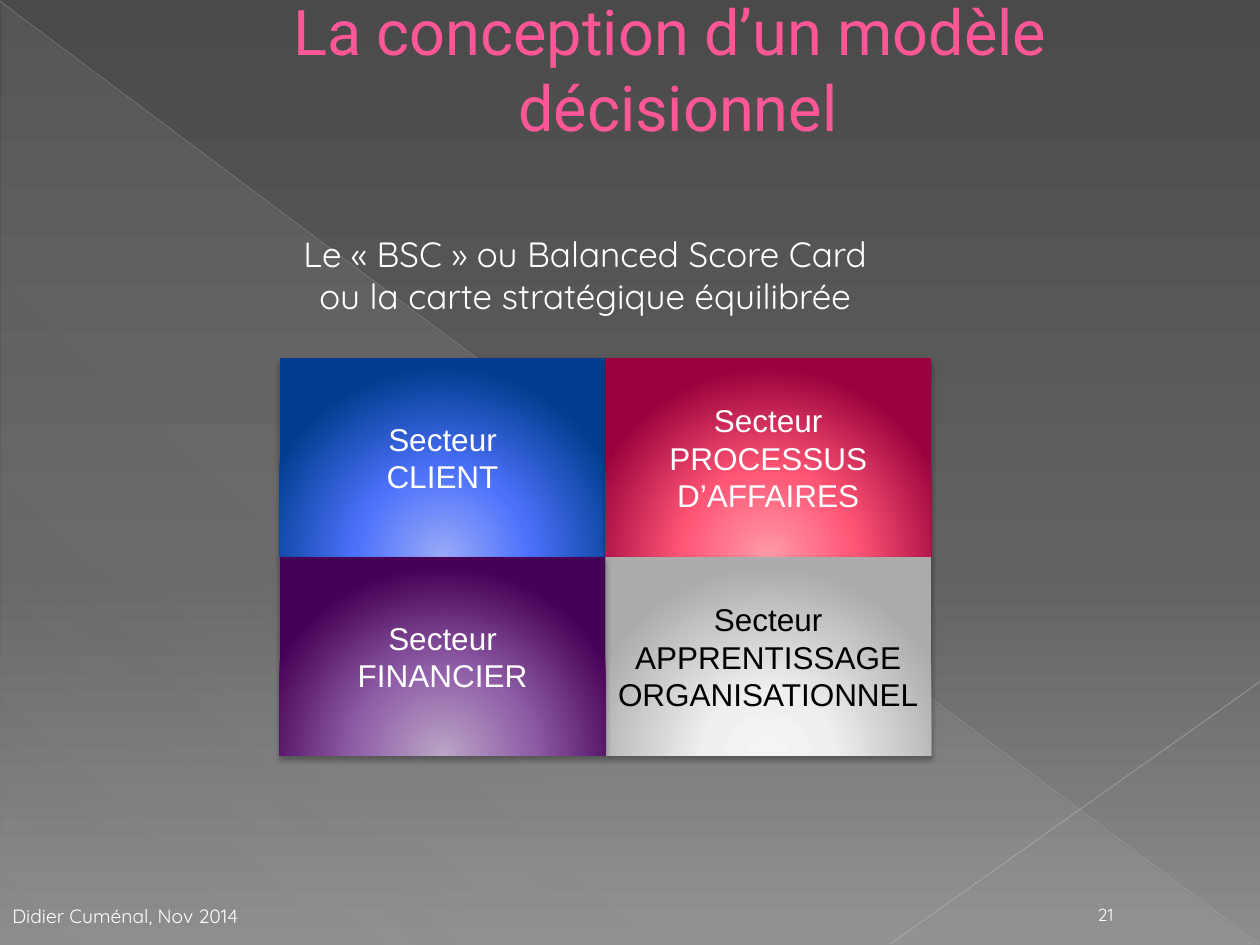
import pptx
import pptx.util
import pptx.dml.color
import pptx.enum.shapes
import pptx.enum.text
import pptx.oxml
import pptx.oxml.ns
from lxml import etree

Inches = pptx.util.Inches
Pt = pptx.util.Pt
RGB = pptx.dml.color.RGBColor
Kind = pptx.enum.shapes.MSO_SHAPE
Align = pptx.enum.text.PP_ALIGN
Anchor = pptx.enum.text.MSO_ANCHOR
Size = pptx.enum.text.MSO_AUTO_SIZE
qn = pptx.oxml.ns.qn

WHITE = RGB(0xFF, 0xFF, 0xFF)
BLACK = RGB(0, 0, 0)
PINK = RGB(0xFF, 0x56, 0x98)
MIST = RGB(0xD2, 0xD2, 0xD2)
SILVER = RGB(0xBF, 0xBF, 0xBF)
PALE = RGB(0xC6, 0xC6, 0xC6)

BACK = [(0, RGB(0x4A, 0x4A, 0x4A)), (60, RGB(0x62, 0x62, 0x62)),
        (100, RGB(0x8C, 0x8C, 0x8C))]
BLUE = [(0, RGB(0x9A, 0xAA, 0xF8)), (46, RGB(0x4C, 0x71, 0xFB)),
        (100, RGB(0x00, 0x3D, 0x8E))]
RED = [(0, RGB(0xFF, 0x9B, 0xA9)), (46, RGB(0xFF, 0x55, 0x75)),
       (100, RGB(0x99, 0x00, 0x3C))]
GREY = [(0, RGB(0xF4, 0xF4, 0xF4)), (34, RGB(0xEF, 0xEF, 0xEF)),
        (100, RGB(0xAB, 0xAB, 0xAB))]
PURPLE = [(0, RGB(0xBB, 0xA5, 0xC6)), (46, RGB(0x90, 0x5F, 0xA8)),
          (100, RGB(0x46, 0x00, 0x55))]
VEIL = [(0, MIST, 10), (70, MIST, 8), (100, MIST, 1)]

GLOW = ('<a:path path="circle"><a:fillToRect l="50000" t="155000" '
        'r="50000" b="-55000"/></a:path>')
SHADE = ('<a:outerShdw {} blurRad="44450" dist="27940" dir="5400000" '
         'algn="ctr" rotWithShape="0"><a:srgbClr val="000000">'
         '<a:alpha val="32000"/></a:srgbClr></a:outerShdw>')

LEFT, TOP = 2.22, 2.84
WIDE, HIGH = 2.585, 1.58
SECTORS = [
    (0, 0, BLUE, WHITE, ["Secteur", "CLIENT"]),
    (1, 0, RED, WHITE, ["Secteur", "PROCESSUS", "D’AFFAIRES"]),
    (1, 1, GREY, BLACK, ["Secteur", "APPRENTISSAGE", "ORGANISATIONNEL"]),
    (0, 1, PURPLE, WHITE, ["Secteur", "FINANCIER"]),
]


def slant(angle):
    return f'<a:lin ang="{angle * 60000}" scaled="0"/>'


def blend(fill, props, stops, course):
    """Give props a gradient; a stop is (place, colour[, opacity])."""
    marks = ""
    for place, color, *rest in stops:
        alpha = f'<a:alpha val="{rest[0] * 1000}"/>' if rest else ""
        marks += (f'<a:gs pos="{place * 1000}"><a:srgbClr val="{color}">'
                  f'{alpha}</a:srgbClr></a:gs>')
    fill.solid()
    grad = pptx.oxml.parse_xml(
        f'<a:gradFill {pptx.oxml.ns.nsdecls("a")} rotWithShape="1">'
        f'<a:gsLst>{marks}</a:gsLst>{course}</a:gradFill>')
    props.replace(props.find(qn("a:solidFill")), grad)


def write(frame, lines, size, font, color, aligns):
    frame.text = "\n".join(lines)
    for para, align in zip(frame.paragraphs, aligns):
        para.alignment = align
        for run in para.runs:
            run.font.size = Pt(size)
            run.font.name = font
            run.font.color.rgb = color


def add_text(slide, box, lines, size, font, color, aligns, anchor=None):
    """Add a text box; without an anchor it grows with its text."""
    frame = slide.shapes.add_textbox(*map(Inches, box)).text_frame
    frame.word_wrap = anchor is not None
    if anchor is None:
        frame.auto_size = Size.SHAPE_TO_FIT_TEXT
    else:
        frame.vertical_anchor = anchor
    write(frame, lines, size, font, color, aligns)


def add_block(slide, kind, box, stops, course):
    shape = slide.shapes.add_shape(kind, *map(Inches, box))
    shape.shadow.inherit = False
    shape.line.fill.background()
    blend(shape.fill, shape.element.spPr, stops, course)
    return shape


def add_sector(slide, col, row, stops, color, lines):
    box = (LEFT + col * WIDE, TOP + row * HIGH, WIDE, HIGH)
    shape = add_block(slide, Kind.RECTANGLE, box, stops, GLOW)
    effects = shape.element.spPr.find(qn("a:effectLst"))
    effects.append(pptx.oxml.parse_xml(
        SHADE.format(pptx.oxml.ns.nsdecls("a"))))
    frame = shape.text_frame
    frame.word_wrap = False
    frame.vertical_anchor = Anchor.MIDDLE
    write(frame, lines, 18, "Arial", color, [Align.CENTER] * len(lines))


def add_line(slide, ends, color, width, alpha):
    line = slide.shapes.add_connector(
        pptx.enum.shapes.MSO_CONNECTOR.STRAIGHT, *map(Inches, ends))
    line.line.color.rgb = color
    line.line.width = Pt(width)
    props = line.element.spPr
    tint = props.find(".//" + qn("a:srgbClr"))
    etree.SubElement(tint, qn("a:alpha")).set("val", str(alpha * 1000))
    etree.SubElement(props, qn("a:effectLst"))


def main():
    deck = pptx.Presentation()
    deck.slide_width, deck.slide_height = Inches(10), Inches(7.5)
    slide = deck.slides.add_slide(deck.slide_layouts[6])
    fill = slide.background.fill
    fill.solid()
    blend(fill, slide.element.find(".//" + qn("p:bgPr")), BACK, slant(90))

    add_block(slide, Kind.RIGHT_TRIANGLE, (0.01, 0.02, 9.98, 7.48),
              VEIL, slant(133))
    add_line(slide, (0, 0.01, 9.99, 7.49), SILVER, 0.39, 35)
    add_line(slide, (10, 5.41, 7.07, 7.49), PALE, 0.47, 45)
    add_text(slide, (0, 7.13, 2.14, 0.29), ["Didier Cuménal, Nov 2014"],
             11, "Quicksand", WHITE, [Align.LEFT])
    add_text(slide, (7.61, 7.06, 2.33, 0.33), ["21"],
             10, "Quicksand", WHITE, [Align.CENTER], Anchor.BOTTOM)
    for sector in SECTORS:
        add_sector(slide, *sector)
    add_text(slide, (2.31, 1.8, 5, 0.77),
             ["Le « BSC » ou Balanced Score Card",
              "ou la carte stratégique équilibrée"],
             20, "Quicksand", WHITE, [Align.LEFT, Align.CENTER])
    add_text(slide, (0.77, 0, 9.22, 1.19),
             ["La conception d’un modèle ", "décisionnel"],
             36, "Roboto", PINK, [Align.CENTER] * 2, Anchor.BOTTOM)
    deck.save("out.pptx")


if __name__ == "__main__":
    main()
